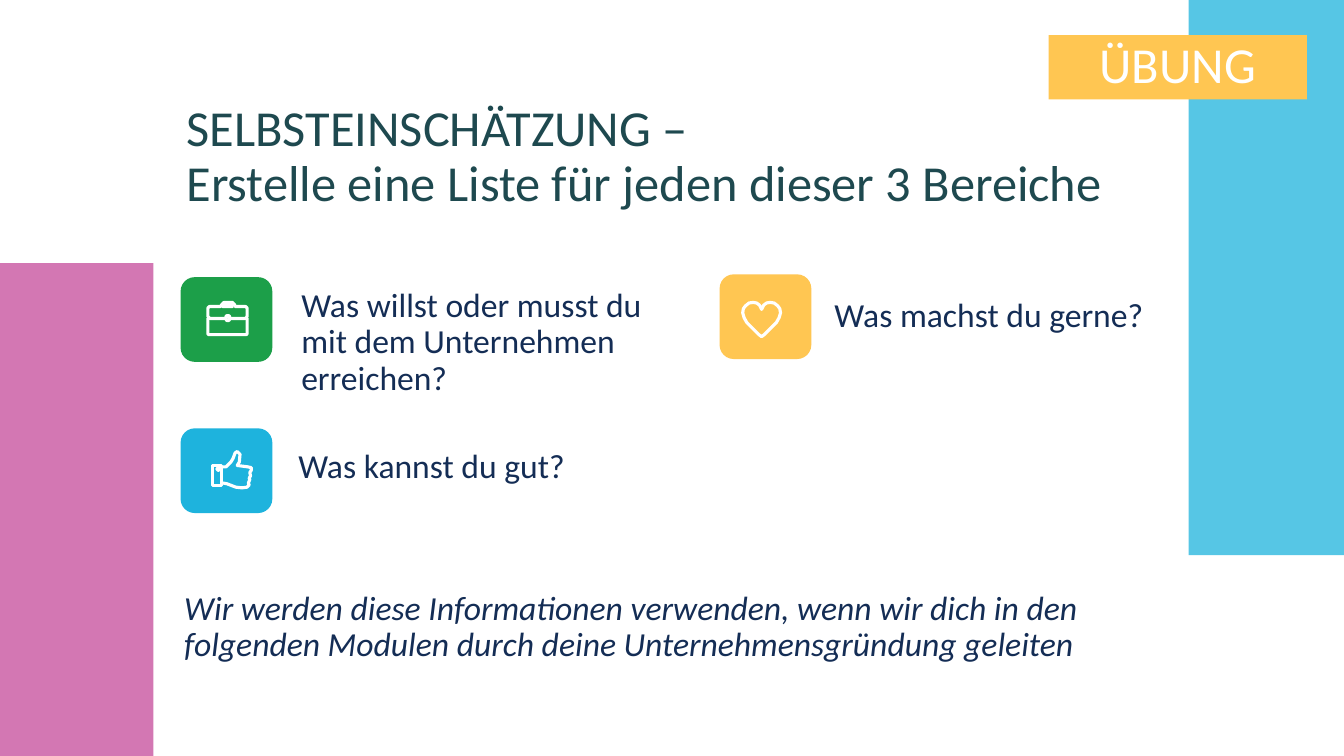
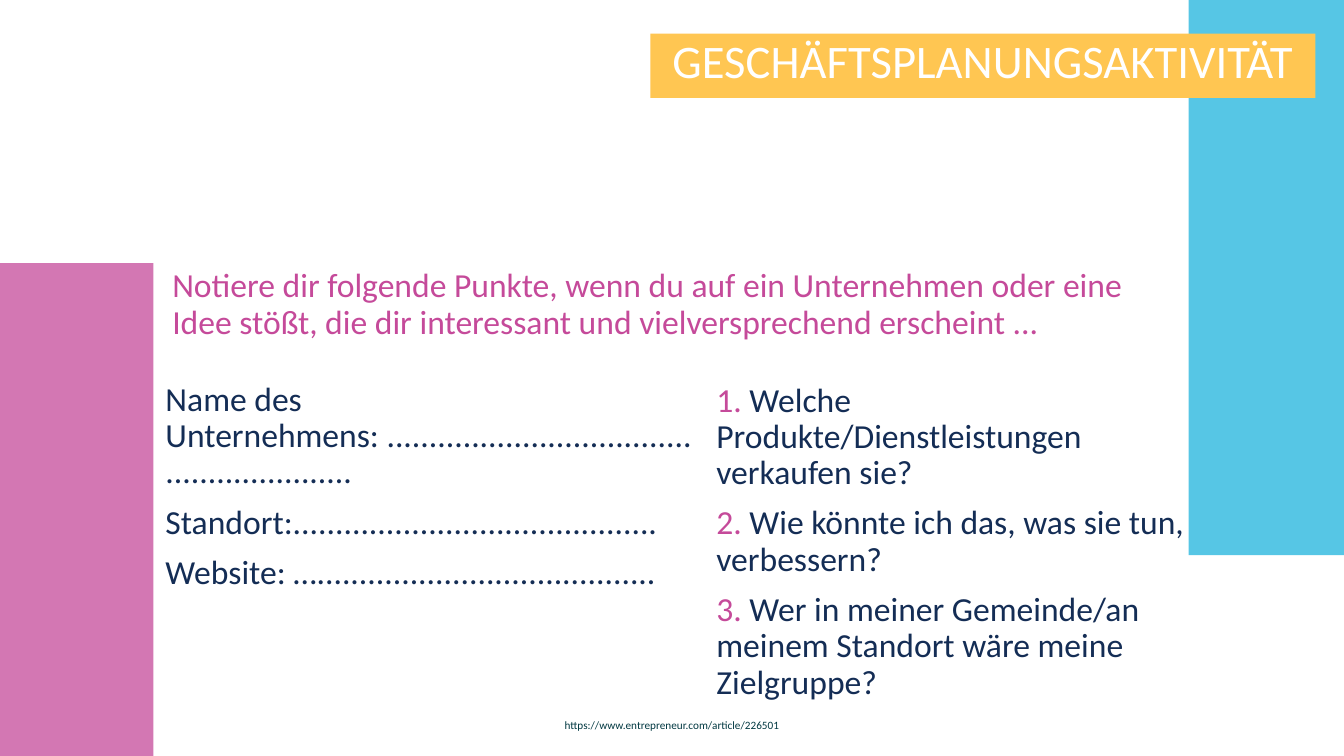
from lxml import etree
from pptx import Presentation
from pptx.dml.color import RGBColor
from pptx.enum import shapes, text
from pptx.oxml import ns
from pptx.util import Pt

PX = 6350
WIDTH, HEIGHT = 1920, 1080
FONT = "Calibri"
NAVY = RGBColor(0x14, 0x2D, 0x55)
TEAL = RGBColor(0x1E, 0x49, 0x4F)
DEEP_TEAL = RGBColor(0x00, 0x38, 0x41)
PINK = RGBColor(0xC5, 0x4A, 0x9A)
BLUE = RGBColor(0x1E, 0xB3, 0xDD)
GREEN = RGBColor(0x1C, 0x9F, 0x49)
YELLOW = RGBColor(0xFF, 0xC6, 0x52)
WHITE = RGBColor(0xFF, 0xFF, 0xFF)

BANDS = [((0, 376, 219, 704), PINK), ((1698, 0, 222, 793), BLUE)]
TILE_SIZE = (131, 121)

HEART_LEFT = [(60, 50), (57, 44), (53, 41), (48, 40), (42, 41), (37, 45), (34, 49),
              (33, 55), (35, 62), (39, 69), (48, 78), (56, 86), (60, 89)]
HEART_RIGHT = [(120 - x, y) for x, y in HEART_LEFT[-2:0:-1]]
HEART = [(HEART_LEFT + HEART_RIGHT, True)]
BRIEFCASE = [
    ([(93, 42), (78, 42), (77, 39), (74, 36), (62, 36), (59, 39), (57, 42), (41, 42),
      (39, 44), (39, 56), (42, 59), (65, 59), (65, 56), (66, 55), (69, 55), (70, 56),
      (70, 59), (93, 59), (95, 56), (95, 44)], True),
    ([(74, 42), (60, 42), (60, 40), (62, 39), (72, 39), (73, 40)], True),
    ([(70, 59), (70, 60), (69, 62), (66, 62), (65, 60), (65, 59)], False),
    ([(39, 58), (39, 81), (40, 82), (94, 82), (95, 81), (95, 58)], False),
]
THUMB = [
    ([(46, 53), (46, 82), (59, 82), (59, 53)], True),
    ([(54, 56), (52, 58), (54, 60), (56, 58)], True),
    ([(60, 78), (66, 79), (79, 84), (88, 85), (95, 84), (98, 81), (97, 78), (99, 73),
      (98, 71), (100, 68), (99, 63), (101, 60), (101, 56), (96, 55), (81, 53), (84, 48),
      (85, 37), (83, 35), (81, 33), (78, 35), (75, 43), (72, 48), (65, 55), (60, 55)], False),
]


def place(shape, box):
    shape.left, shape.top, shape.width, shape.height = (value * PX for value in box)
    return shape


def text_box(page, box):
    return page.shapes.add_textbox(*(value * PX for value in box))


def block(page, box, color, kind=shapes.MSO_SHAPE.RECTANGLE):
    shape = page.shapes.add_shape(kind, *(value * PX for value in box))
    shape.shadow.inherit = False
    shape.fill.solid()
    shape.fill.fore_color.rgb = color
    shape.line.fill.background()
    return shape


def write(shape, *lines, size=24, color=NAVY, italic=False, align=text.PP_ALIGN.LEFT):
    frame = shape.text_frame
    frame.word_wrap = True
    frame.auto_size = text.MSO_AUTO_SIZE.NONE
    frame.vertical_anchor = text.MSO_ANCHOR.TOP
    for index, line in enumerate(lines):
        para = frame.add_paragraph() if index else frame.paragraphs[0]
        properties = para._p.get_or_add_pPr()
        properties.set("marL", "0")
        properties.set("indent", "0")
        etree.SubElement(properties, ns.qn("a:buNone"))
        para.alignment = align
        para.line_spacing = 0.9
        para.space_before = Pt(10 if index else 0)
        spans = [(line, color)] if isinstance(line, str) else line
        for words, tint in spans:
            for number, part in enumerate(words.split("\n")):
                if number:
                    para.add_line_break()
                span = para.add_run()
                span.text = part
                span.font.name = FONT
                span.font.size = Pt(size)
                span.font.italic = italic
                span.font.color.rgb = tint


def side_bands(page):
    for box, color in BANDS:
        band = block(page, box, color)
        tint = band.element.xpath(".//p:spPr/a:solidFill/a:srgbClr")[0]
        etree.SubElement(tint, ns.qn("a:alpha"), val="75000")
        page.shapes.element.insert(2, band.element)


def badge(shape, words, size):
    shape.fill.solid()
    shape.fill.fore_color.rgb = YELLOW
    write(shape, words, size=size, color=WHITE, align=text.PP_ALIGN.CENTER)


def icon_tile(page, left, top, color, strokes):
    tile = block(page, (left, top, *TILE_SIZE), color, shapes.MSO_SHAPE.ROUNDED_RECTANGLE)
    builder = page.shapes.build_freeform(*strokes[0][0][0], scale=float(PX))
    for index, (points, closed) in enumerate(strokes):
        if index:
            builder.move_to(*points[0])
        builder.add_line_segments(points[1:], close=closed)
    icon = builder.convert_to_shape(tile.left, tile.top)
    icon.shadow.inherit = False
    icon.fill.background()
    icon.line.color.rgb = WHITE
    icon.line.width = Pt(2.25)


def assessment_page(deck):
    page = deck.slides.add_slide(deck.slide_layouts[1])
    side_bands(page)
    write(place(page.shapes.title, (252, 140, 1391, 192)),
          "SELBSTEINSCHÄTZUNG –\nErstelle eine Liste für jeden dieser 3 Bereiche",
          size=36, color=TEAL)
    icon_tile(page, 258, 396, GREEN, BRIEFCASE)
    icon_tile(page, 258, 612, BLUE, THUMB)
    icon_tile(page, 1028, 392, YELLOW, HEART)
    write(place(page.placeholders[1], (416, 405, 572, 193)),
          "Was willst oder musst du mit dem Unternehmen erreichen?")
    write(text_box(page, (412, 635, 605, 193)), "Was kannst du gut?")
    write(text_box(page, (1178, 420, 492, 193)), "Was machst du gerne?")
    write(text_box(page, (249, 838, 1413, 193)),
          "Wir werden diese Informationen verwenden, wenn wir dich in den "
          "folgenden Modulen durch deine Unternehmensgründung geleiten", italic=True)
    badge(block(page, (1498, 50, 369, 92), YELLOW), "ÜBUNG", 36)


def planning_page(deck):
    page = deck.slides.add_slide(deck.slide_layouts[3])
    side_bands(page)
    badge(place(page.shapes.title, (929, 48, 950, 92)), "GESCHÄFTSPLANUNGSAKTIVITÄT", 33.3)
    write(text_box(page, (232, 377, 1466, 125)),
          "Notiere dir folgende Punkte, wenn du auf ein Unternehmen oder eine "
          "Idee stößt, die dir interessant und vielversprechend erscheint ...", color=PINK)
    write(place(page.placeholders[1], (222, 539, 788, 276)),
          "Name des Unternehmens: " + "." * 58,
          "Standort:" + "." * 43,
          "Website: …" + "." * 40)
    questions = ["Welche Produkte/Dienstleistungen verkaufen sie?",
                 "Wie könnte ich das, was sie tun, verbessern?",
                 "Wer in meiner Gemeinde/an meinem Standort wäre meine Zielgruppe?"]
    write(place(page.placeholders[2], (1009, 540, 698, 386)),
          *([(f"{number}. ", PINK), (question, NAVY)]
            for number, question in enumerate(questions, 1)))
    write(text_box(page, (0, 1021, WIDTH, 59)), "https://www.entrepreneur.com/article/226501",
          size=8, color=DEEP_TEAL, align=text.PP_ALIGN.CENTER)


def main():
    deck = Presentation()
    deck.slide_width, deck.slide_height = WIDTH * PX, HEIGHT * PX
    assessment_page(deck)
    planning_page(deck)
    deck.save("out.pptx")


if __name__ == "__main__":
    main()
